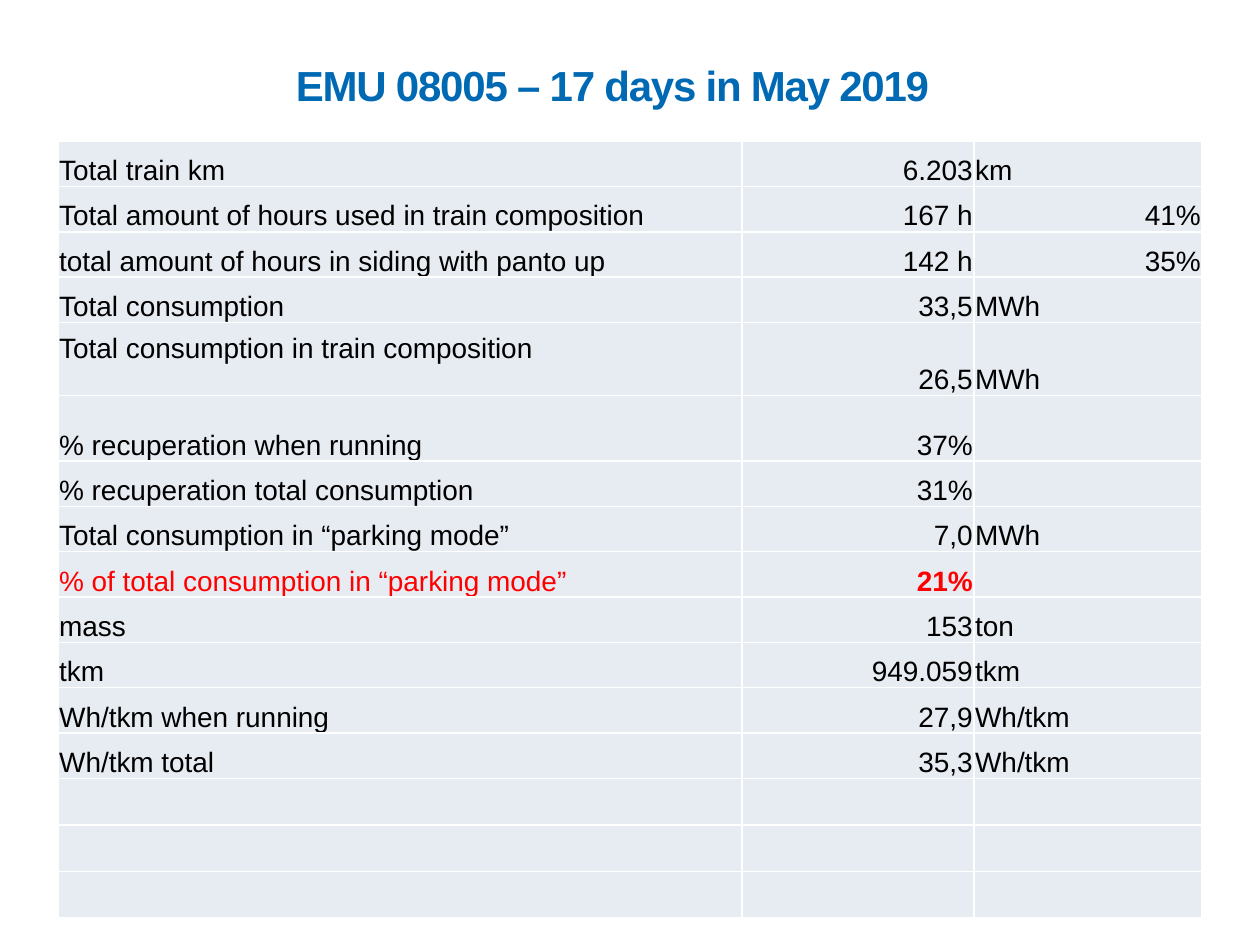
from lxml import etree
from pptx import Presentation
from pptx.dml.color import RGBColor
from pptx.enum.text import MSO_ANCHOR, PP_ALIGN
from pptx.oxml.ns import qn
from pptx.util import Inches, Pt

LEFT, CENTER, RIGHT = PP_ALIGN.LEFT, PP_ALIGN.CENTER, PP_ALIGN.RIGHT
MIDDLE, BOTTOM = MSO_ANCHOR.MIDDLE, MSO_ANCHOR.BOTTOM

COLORS = {
    "title": "0069B4",
    "text": "000000",
    "alert": "FF0000",
    "cell": "E7EBF2",
    "border": "FFFFFF",
}

ROWS = [
    ("Total train km", "6.203", "km"),
    ("Total amount of hours used in train composition", "167 h", "41%"),
    ("total amount of hours in siding with panto up", "142 h", "35%"),
    ("Total consumption", "33,5", "MWh"),
    ("Total consumption in train composition", "26,5", "MWh"),
    ("% recuperation when running", "37%", ""),
    ("% recuperation total consumption", "31%", ""),
    ("Total consumption in “parking mode”", "7,0", "MWh"),
    ("% of total consumption in “parking mode”", "21%", ""),
    ("mass", "153", "ton"),
    ("tkm", "949.059", "tkm"),
    ("Wh/tkm when running", "27,9", "Wh/tkm"),
    ("Wh/tkm total", "35,3", "Wh/tkm"),
] + [("", "", "")] * 3
COL_WIDTHS = [5.43, 1.84, 1.81]
ROW_HEIGHTS = [0.36] * 4 + [0.58, 0.52] + [0.36] * 7 + [0.37] * 3
COMPOSITION_ROW, ALERT_ROW = 4, 8


def add_run(p, text, color, **font):
    r = p.add_run()
    r.text = text
    r.font.name = "Arial"
    r.font.color.rgb = RGBColor.from_string(COLORS[color])
    for name, value in font.items():
        setattr(r.font, name, value)
    return r


def add_borders(cell):
    tc_pr = cell._tc.get_or_add_tcPr()
    for side in ("lnL", "lnR", "lnT", "lnB"):
        ln = etree.SubElement(tc_pr, qn(f"a:{side}"), w=str(Pt(1)))
        fill = etree.SubElement(ln, qn("a:solidFill"))
        etree.SubElement(fill, qn("a:srgbClr"), val=COLORS["border"])


prs = Presentation()
prs.slide_width, prs.slide_height = Inches(10), Inches(7.5)
s = prs.slides.add_slide(prs.slide_layouts[6])

frame = s.shapes.add_table(
    len(ROWS), len(COL_WIDTHS), Inches(0.46), Inches(1.12),
    Inches(sum(COL_WIDTHS)), Inches(sum(ROW_HEIGHTS)),
)
table = frame.table
table.first_row = table.horz_banding = False
for column, width in zip(table.columns, COL_WIDTHS):
    column.width = Inches(width)
for row, height in zip(table.rows, ROW_HEIGHTS):
    row.height = Inches(height)

cell_format = {
    "margin_left": Inches(0.01),
    "margin_right": Inches(0.01),
    "margin_top": Inches(0.01),
    "margin_bottom": 0,
    "vertical_anchor": BOTTOM,
}
for i, values in enumerate(ROWS):
    for j, text in enumerate(values):
        cell = table.cell(i, j)
        add_borders(cell)
        cell.fill.solid()
        cell.fill.fore_color.rgb = RGBColor.from_string(COLORS["cell"])
        for name, value in cell_format.items():
            setattr(cell, name, value)
        if text:
            p = cell.text_frame.paragraphs[0]
            p.alignment = RIGHT if j == 1 or text.endswith("%") else LEFT
            alert = i == ALERT_ROW
            add_run(p, text, "alert" if alert else "text",
                    size=Pt(16), bold=alert and j == 1)
table.cell(COMPOSITION_ROW, 0).margin_bottom = Inches(0.25)

sp = s.shapes.add_textbox(Inches(1.04), Inches(0.43), Inches(7.5), Inches(0.48))
tf = sp.text_frame
title_format = {
    "word_wrap": True,
    "vertical_anchor": MIDDLE,
    "margin_left": Inches(0.21),
    "margin_right": Inches(0.07),
    "margin_top": Inches(0.04),
    "margin_bottom": Inches(0.04),
}
for name, value in title_format.items():
    setattr(tf, name, value)
p = tf.paragraphs[0]
p.alignment = CENTER
r = add_run(p, "EMU 08005 – 17 days in May 2019", "title", size=Pt(24), bold=True)
r._r.get_or_add_rPr().set("spc", "-70")

prs.save("out.pptx")
